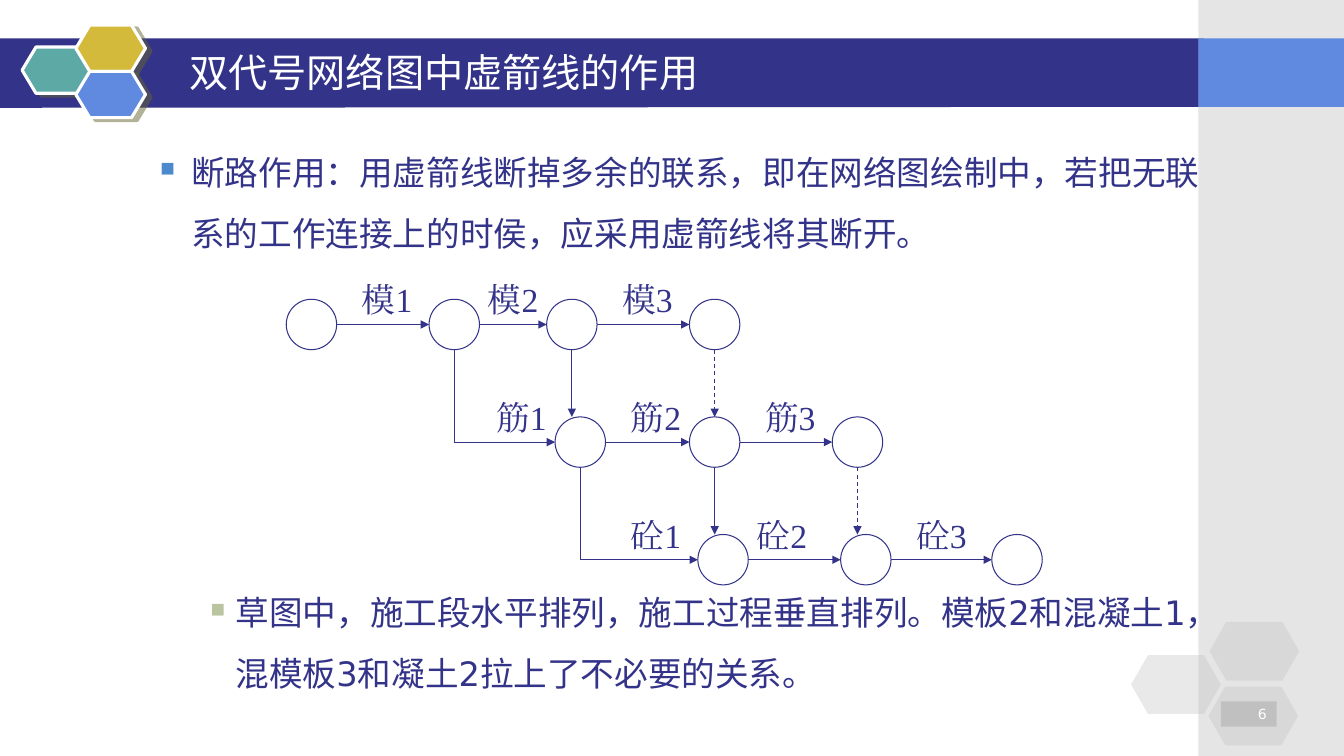
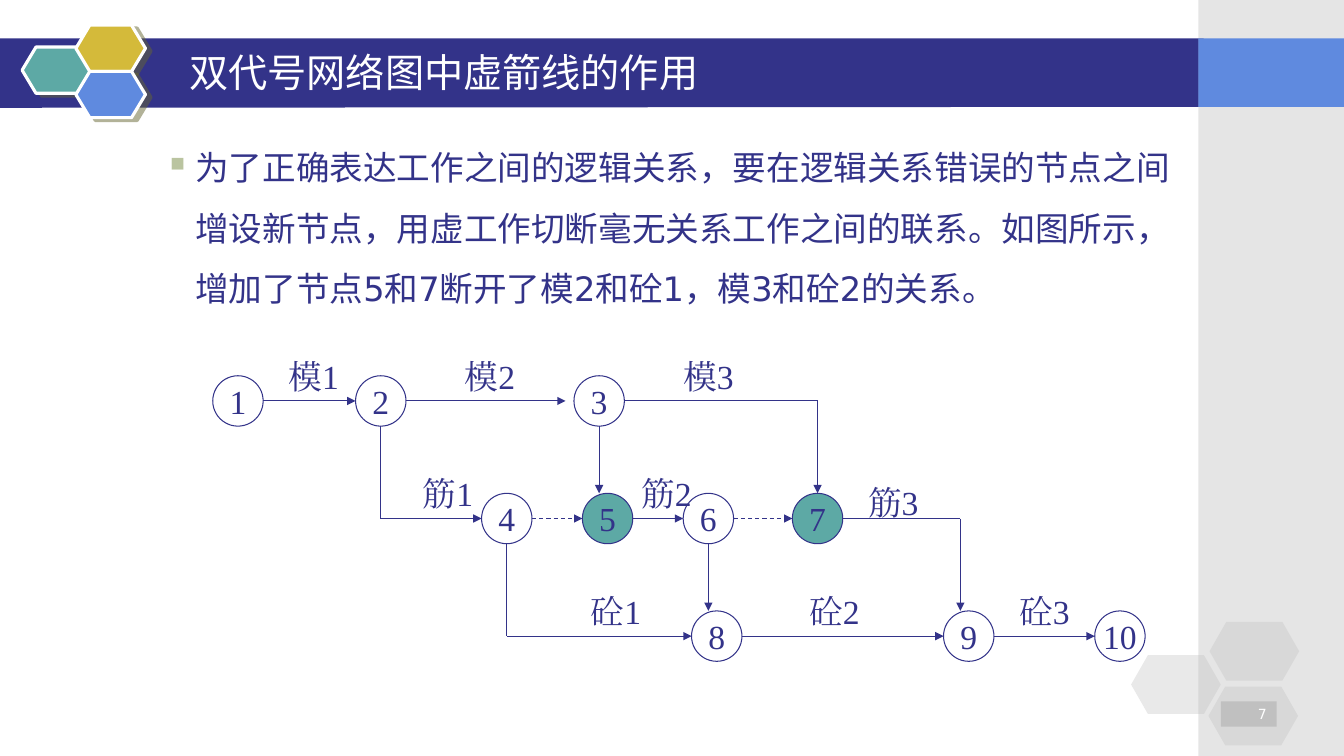
from lxml.etree import SubElement
from pptx import Presentation
from pptx.dml.color import RGBColor
from pptx.enum.dml import MSO_LINE
from pptx.enum.shapes import MSO_CONNECTOR, MSO_SHAPE as SHAPE
from pptx.enum.text import MSO_ANCHOR as ANCHOR, PP_ALIGN as ALIGN
from pptx.oxml.ns import qn
from pptx.util import Pt

COLORS = {
    "navy": "333389", "blue": "5F8ADF", "teal": "5DA9A5", "gold": "D4BA3A",
    "gray": "C0C0C0", "white": "FFFFFF", "shade": "666633",
    "main_bullet": "4D8ACD", "sub_bullet": "BAC4A0",
}
BODY_FONT, TITLE_FONT, DIAGRAM_FONT = "DejaVu Sans", "Noto Sans CJK SC", "Times New Roman"
TITLE = "双代号网络图中虚箭线的作用"
SLIDE_W, SLIDE_H = 960, 540
SIDE_X = 856
RADIUS, ROW_GAP = 18, 84
LABEL_W, LABEL_H, LABEL_RISE = 60, 24, 18


def rgb(name):
    return RGBColor.from_string(COLORS[name])


def add_effects(shape, shadow=False):
    effects = SubElement(shape._element.spPr, qn("a:effectLst"))
    if shadow:
        outer = SubElement(effects, qn("a:outerShdw"), blurRad="0", dist=str(Pt(4.5)),
                           dir=str(27 * 60000), algn="ctr", rotWithShape="0")
        color = SubElement(outer, qn("a:srgbClr"), val=COLORS["shade"])
        SubElement(color, qn("a:alpha"), val="50000")


def paint(shape, fill=None, line=None, width=0.75, alpha=None, shadow=False):
    if fill:
        shape.fill.solid()
        shape.fill.fore_color.rgb = rgb(fill)
        if alpha:
            color = shape._element.spPr.find(qn("a:solidFill"))[0]
            SubElement(color, qn("a:alpha"), val=str(alpha * 1000))
    else:
        shape.fill.background()
    if line:
        shape.line.color.rgb = rgb(line)
        shape.line.width = Pt(width)
    else:
        shape.line.fill.background()
    add_effects(shape, shadow)


def add_figure(slide, kind, box, **look):
    shape = slide.shapes.add_shape(kind, *map(Pt, box))
    paint(shape, **look)
    return shape


def write(shape, text, size, font, color="navy", align=ALIGN.LEFT,
          anchor=ANCHOR.MIDDLE, wrap=True):
    frame = shape.text_frame
    frame.word_wrap = wrap
    frame.vertical_anchor = anchor
    paragraph = frame.paragraphs[0]
    paragraph.alignment = align
    run = paragraph.add_run()
    run.text = text
    run.font.size = Pt(size)
    run.font.name = font
    run.font.color.rgb = rgb(color)
    SubElement(run._r.get_or_add_rPr(), qn("a:ea"), typeface=font)
    return paragraph


def add_text(slide, box, *args, **style):
    return write(slide.shapes.add_textbox(*map(Pt, box)), *args, **style)


def add_header(slide):
    band = slide.shapes.build_freeform(Pt(0), Pt(27.4))
    band.add_line_segments([(Pt(x), Pt(y)) for x, y in
                            ((859.7, 27.4), (859, 76.3), (0, 77))])
    paint(band.convert_to_shape(), "navy")
    side_w = SLIDE_W - SIDE_X
    add_figure(slide, SHAPE.RECTANGLE, (SIDE_X, 0, side_w, SLIDE_H), fill="gray", alpha=40)
    add_figure(slide, SHAPE.RECTANGLE, (SIDE_X, 27.4, side_w, 49), fill="blue")
    for x, y, color in ((15.8, 33.6, "teal"), (54.2, 18, "gold"), (54.2, 51, "blue")):
        cell = add_figure(slide, SHAPE.HEXAGON, (x, y, 49.7, 33.1), fill=color,
                          line="white", width=2.25, shadow=True)
        cell.adjustments[0] = 0.3
    add_text(slide, (128.2, 30.2, 696, 42), TITLE, 28, TITLE_FONT, "white")


def add_footer(slide, number):
    for x, y in ((808, 468), (864, 444.2), (863.2, 490.4)):
        cell = add_figure(slide, SHAPE.HEXAGON, (x, y, 64, 42), fill="gray", alpha=35)
        cell.adjustments[0] = 0.286
    badge = add_figure(slide, SHAPE.RECTANGLE, (872, 501, 40, 18), fill="gray")
    write(badge, str(number), 10, BODY_FONT, "white", ALIGN.RIGHT)


def add_bullet(slide, box, text, bullet, margin, hanging):
    paragraph = add_text(slide, box, text, 24, BODY_FONT, anchor=ANCHOR.TOP)
    paragraph.line_spacing = 1.5
    props = paragraph._p.get_or_add_pPr()
    props.set("marL", str(Pt(margin)))
    props.set("indent", str(-Pt(hanging)))
    color = SubElement(props, qn("a:buClr"))
    SubElement(color, qn("a:srgbClr"), val=COLORS[bullet])
    SubElement(props, qn("a:buSzPct"), val="60000")
    SubElement(props, qn("a:buChar"), char="■")


def add_route(slide, points, dashed=False):
    """Join the points with straight lines; the last one carries the arrowhead."""
    for start, end in zip(points, points[1:]):
        line = slide.shapes.add_connector(MSO_CONNECTOR.STRAIGHT, *map(Pt, (*start, *end)))
        line.line.color.rgb = rgb("navy")
        line.line.width = Pt(0.75)
        if dashed:
            line.line.dash_style = MSO_LINE.DASH
        if end == points[-1]:
            SubElement(line.line._get_or_add_ln(), qn("a:tailEnd"), type="triangle")
        add_effects(line)


def add_network(slide, left, top, network):
    """Draw the network with its first node centred on (left, top)."""
    nodes = {}
    for row, centers in enumerate(network["rows"]):
        for x in centers:
            nodes[len(nodes) + 1] = (left + x, top + row * ROW_GAP)

    for number, (x, y) in nodes.items():
        fill = "teal" if number in network["added"] else None
        node = add_figure(slide, SHAPE.OVAL, (x - RADIUS, y - RADIUS, 2 * RADIUS, 2 * RADIUS),
                          fill=fill, line="navy")
        if network["numbered"]:
            write(node, str(number), 24, DIAGRAM_FONT, align=ALIGN.CENTER, wrap=False)

    for source, target, gap in network["across"]:
        (x1, y), (x2, _) = nodes[source], nodes[target]
        add_route(slide, [(x1 + RADIUS, y), (x2 - RADIUS - gap, y)],
                  (source, target) in network["dummies"])
    for source, target in network["down"]:
        (x, y1), (_, y2) = nodes[source], nodes[target]
        add_route(slide, [(x, y1 + RADIUS), (x, y2 - RADIUS)],
                  (source, target) in network["dummies"])
    for source, target in network["down_across"]:
        (x1, y1), (x2, y2) = nodes[source], nodes[target]
        add_route(slide, [(x1, y1 + RADIUS), (x1, y2), (x2 - RADIUS, y2)])
    for source, target, shift in network["across_down"]:
        (x1, y1), (x2, y2) = nodes[source], nodes[target]
        bend = x2 + shift
        add_route(slide, [(x1 + RADIUS, y1), (bend, y1), (bend, y2 - RADIUS)])

    for row, (work, centers) in enumerate(zip("模筋砼", network["labels"])):
        for section, x in enumerate(centers, 1):
            name = f"{work}{section}"
            rise = network["rises"].get(name, LABEL_RISE)
            box = (left + x - LABEL_W / 2, top + row * ROW_GAP - rise - LABEL_H / 2,
                   LABEL_W, LABEL_H)
            add_text(slide, box, name, 24, DIAGRAM_FONT, align=ALIGN.CENTER, wrap=False)


DRAFT = {
    "rows": ((0, 102, 186, 288), (192, 288, 390), (294, 396, 504)),
    "labels": ((54, 144, 240), (150, 246, 342), (246, 336, 450)),
    "rises": {}, "numbered": False, "added": (),
    "across": ((1, 2, 0), (2, 3, 0), (3, 4, 0), (5, 6, 0), (6, 7, 0), (8, 9, 0), (9, 10, 0)),
    "down": ((3, 5), (4, 6), (6, 8), (7, 9)),
    "down_across": ((2, 5), (5, 8)),
    "across_down": (),
    "dummies": ((4, 6), (7, 9)),
}
CORRECTED = {
    "rows": ((0, 102, 258), (192, 264, 336, 414), (342, 522, 630)),
    "labels": ((54, 180, 336), (150, 306, 468), (270, 426, 576)),
    "rises": {"筋3": 12}, "numbered": True, "added": (5, 7),
    "across": ((1, 2, 0), (2, 3, 6), (4, 5, 0), (5, 6, 0), (6, 7, 0), (8, 9, 0), (9, 10, 0)),
    "down": ((3, 5), (6, 8)),
    "down_across": ((2, 4), (4, 8)),
    "across_down": ((3, 7, 0), (7, 9, -6)),
    "dummies": ((4, 5), (6, 7)),
}


def new_slide(deck, number):
    slide = deck.slides.add_slide(deck.slide_layouts[6])
    add_header(slide)
    add_footer(slide, number)
    return slide


def add_draft_slide(deck):
    slide = new_slide(deck, 6)
    add_bullet(slide, (71.3, 90.7, 809.3, 100),
               "断路作用：用虚箭线断掉多余的联系，即在网络图绘制中，若把无联系的工作连接上的时侯，"
               "应采用虚箭线将其断开。", "main_bullet", 58.3, 22.3)
    add_bullet(slide, (71.3, 405, 809.3, 100),
               "草图中，施工段水平排列，施工过程垂直排列。模板2和混凝土1，混模板3和凝土2"
               "拉上了不必要的关系。", "sub_bullet", 90, 18)
    add_network(slide, 222.5, 231.8, DRAFT)


def add_corrected_slide(deck):
    slide = new_slide(deck, 7)
    add_bullet(slide, (42.5, 87.1, 809.3, 140),
               "为了正确表达工作之间的逻辑关系，要在逻辑关系错误的节点之间增设新节点，"
               "用虚工作切断毫无关系工作之间的联系。如图所示，增加了节点5和7断开了模2和砼1，"
               "模3和砼2的关系。", "sub_bullet", 90, 18)
    add_network(slide, 170, 286.4, CORRECTED)


def main():
    deck = Presentation()
    deck.slide_width, deck.slide_height = Pt(SLIDE_W), Pt(SLIDE_H)
    add_draft_slide(deck)
    add_corrected_slide(deck)
    deck.save("out.pptx")


if __name__ == "__main__":
    main()
